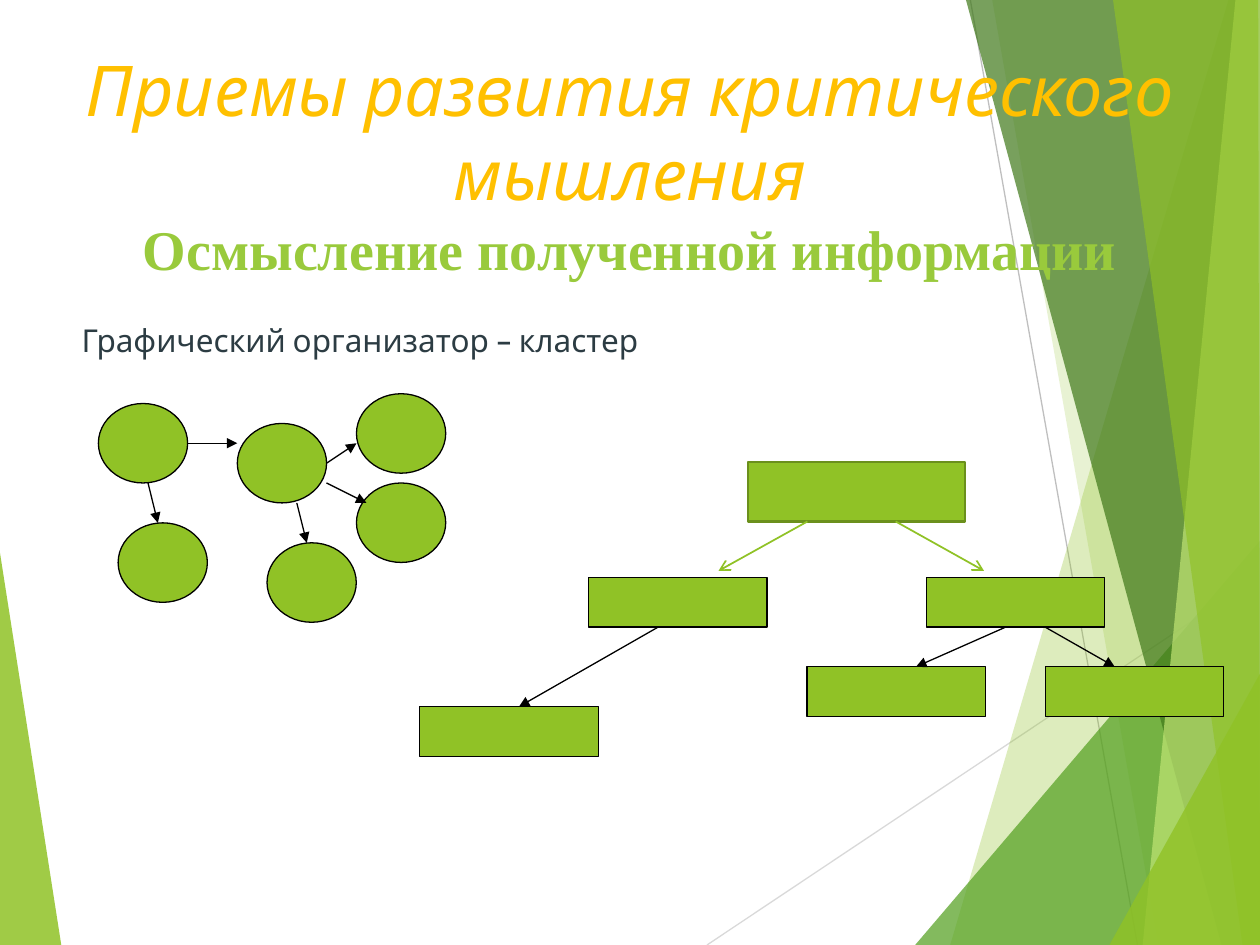
from lxml import etree
from pptx import Presentation
from pptx import util as u
from pptx.dml import color
from pptx.enum import shapes, text
from pptx.oxml import ns

Pt = u.Pt
COLORS = {
    "green": "90C226", "leaf": "54A021", "forest": "3F7819", "lime": "C0E474",
    "edge": "6B901C", "black": "000000", "gold": "FFC000", "subtitle": "99CA3C",
    "body": "2C3C43", "light": "D9D9D9", "gray": "BFBFBF",
}


def rgb(name):
    return color.RGBColor.from_string(COLORS[name])


def add_line(start, end, line_color, width, head=None):
    line = slide.shapes.add_connector(
        shapes.MSO_CONNECTOR.STRAIGHT, *[Pt(value) for value in (*start, *end)])
    line.line.color.rgb = rgb(line_color)
    line.line.width = Pt(width)
    if head:
        etree.SubElement(line.line._get_or_add_ln(), ns.qn("a:tailEnd"), type=head)
    etree.SubElement(line._element.spPr, ns.qn("a:effectLst"))


presentation = Presentation()
presentation.slide_width, presentation.slide_height = Pt(720), Pt(540)
slide = presentation.slides.add_slide(presentation.slide_layouts[5])

add_line((404, 540), (720, 329), "light", 0.75)
add_line((554.5, 0), (650, 540), "gray", 0.75)

facets = [
    ("green", 85, [(0, 316), (35.3, 540), (0, 540)]),
    ("green", 30, [(702, 0), (543, 540), (720, 540), (720, 0)]),
    ("green", 20, [(567.4, 0), (661.7, 540), (720, 540), (720, 0)]),
    ("leaf", 72, [(522.7, 540), (720, 309), (720, 540)]),
    ("forest", 70, [(552.3, 0), (698.4, 540), (720, 540), (720, 0)]),
    ("lime", 70, [(706.3, 0), (653, 540), (720, 540), (720, 0)]),
    ("green", 65, [(636, 0), (710, 540), (720, 540), (718.6, 0)]),
    ("green", 80, [(634.5, 540), (720, 385.2), (720, 540)]),
]
for fill_color, opacity, points in facets:
    builder = slide.shapes.build_freeform(*points[0], scale=Pt(1))
    builder.add_line_segments(points[1:], close=True)
    facet = builder.convert_to_shape()
    facet.shadow.inherit = False
    facet.fill.solid()
    facet.fill.fore_color.rgb = rgb(fill_color)
    facet.line.fill.background()
    tint = facet._element.spPr.find(".//" + ns.qn("a:srgbClr"))
    etree.SubElement(tint, ns.qn("a:alpha"), val=str(opacity * 1000))

title = slide.shapes.title
slide.shapes._spTree.append(title._element)
title.left, title.top, title.width, title.height = Pt(36), Pt(23), Pt(648), Pt(157)
frame = title.text_frame
frame.auto_size = text.MSO_AUTO_SIZE.NONE
frame.vertical_anchor = text.MSO_ANCHOR.TOP
frame.text = "Приемы развития критического мышления\nОсмысление полученной информации"
styles = [("Cabin", 40, "gold", True), ("Times New Roman", 32, "subtitle", False)]
for paragraph, (font_name, size, font_color, italic) in zip(frame.paragraphs, styles):
    paragraph.alignment = text.PP_ALIGN.CENTER
    paragraph.font.name = font_name
    paragraph.font.size = Pt(size)
    paragraph.font.color.rgb = rgb(font_color)
    paragraph.font.italic = italic
    paragraph.font.bold = not italic

body = slide.shapes.add_textbox(Pt(39.6), Pt(180), Pt(648), Pt(40))
body.text_frame.word_wrap = True
paragraph = body.text_frame.paragraphs[0]
paragraph.text = "Графический организатор – кластер"
paragraph.font.name = "Cabin"
paragraph.font.size = Pt(18)
paragraph.font.color.rgb = rgb("body")

circle_spots = [(56.2, 230.6), (135.6, 242), (203.7, 225),
                (67.5, 298.8), (152.6, 310.2), (203.7, 276)]
box_spots = [(529.3, 330), (336.3, 330), (597.3, 381), (461.1, 381), (239.9, 403.8)]
nodes = [("OVAL", *spot, 51, 45.4, "black", 0.75) for spot in circle_spots]
nodes += [("RECTANGLE", *spot, 102, 28.4, "black", 0.75) for spot in box_spots]
nodes.append(("RECTANGLE", 427.4, 264, 124, 34, "edge", 1.5))
for kind, left, top, width, height, line_color, line_width in nodes:
    node = slide.shapes.add_shape(
        shapes.MSO_SHAPE[kind], Pt(left), Pt(top), Pt(width), Pt(height))
    node.shadow.inherit = False
    node.fill.solid()
    node.fill.fore_color.rgb = rgb("green")
    node.line.color.rgb = rgb(line_color)
    node.line.width = Pt(line_width)

cluster_arrows = [
    ((84.6, 276), (90.2, 298.8)), ((107.2, 253.3), (135.6, 253.3)),
    ((186.6, 264.7), (203.7, 253.3)), ((186.6, 276), (209.4, 287.4)),
    ((169.6, 287.4), (175.3, 310.2)),
]
tree_arrows = [
    ((574.6, 358.4), (523.5, 381)), ((597.3, 358.4), (637, 381)),
    ((376, 358.4), (296.6, 403.8)),
]
for start, end in cluster_arrows + tree_arrows:
    add_line(start, end, "black", 0.75, "triangle")
for start, end in [((511.8, 298), (562.3, 326.2)), ((461.4, 298), (410.6, 326.2))]:
    add_line(start, end, "green", 1, "arrow")

presentation.save("out.pptx")
